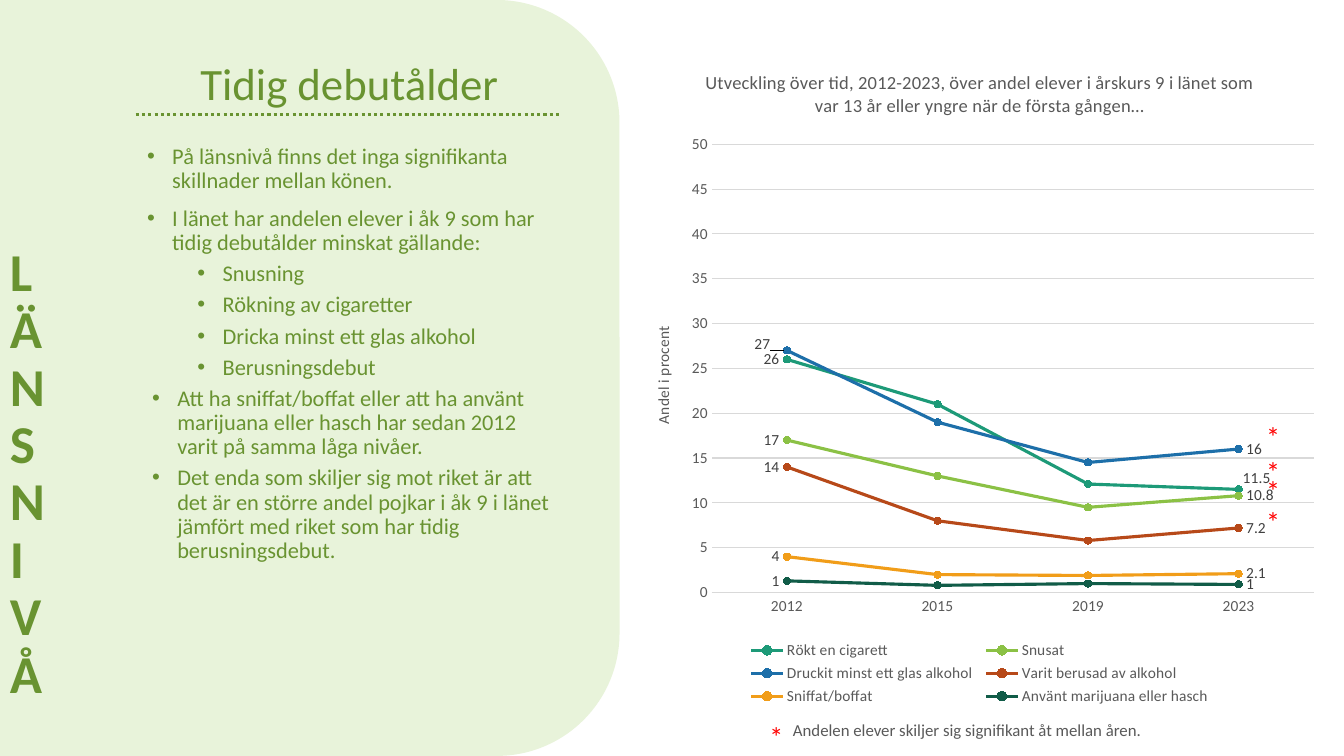
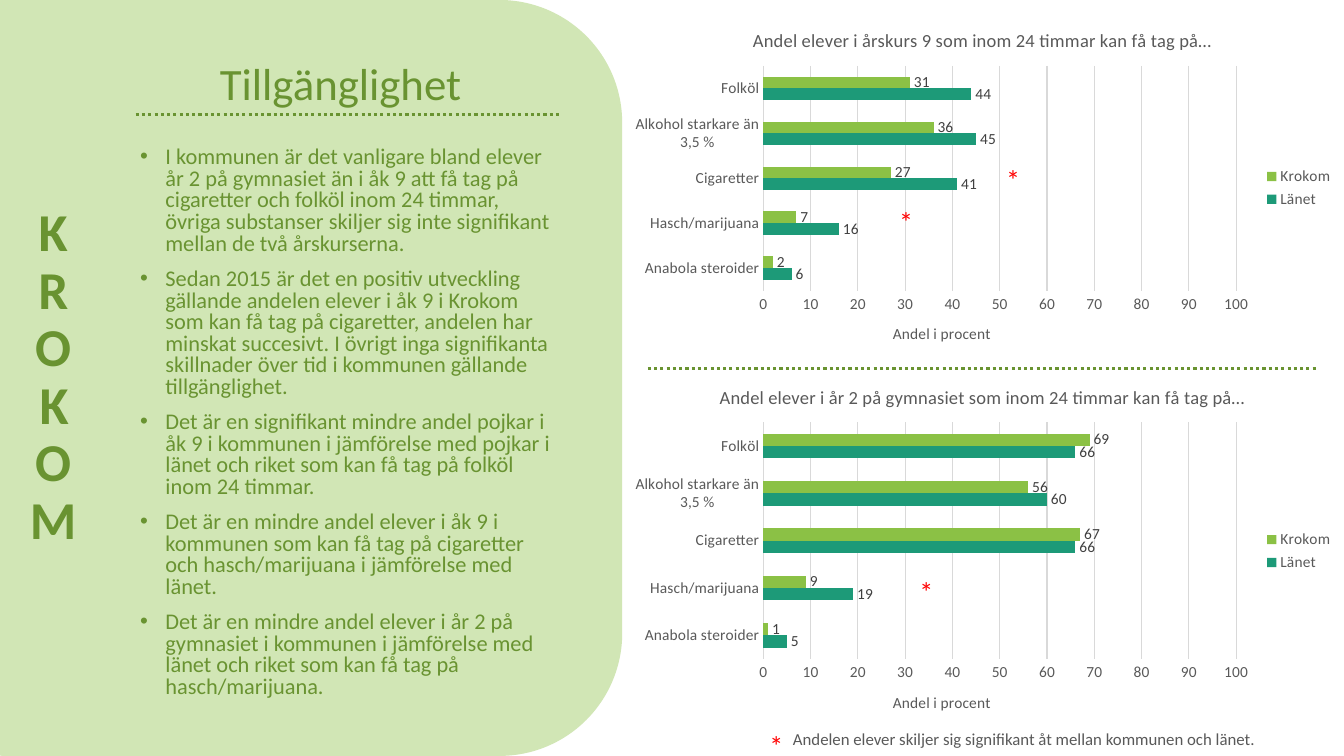
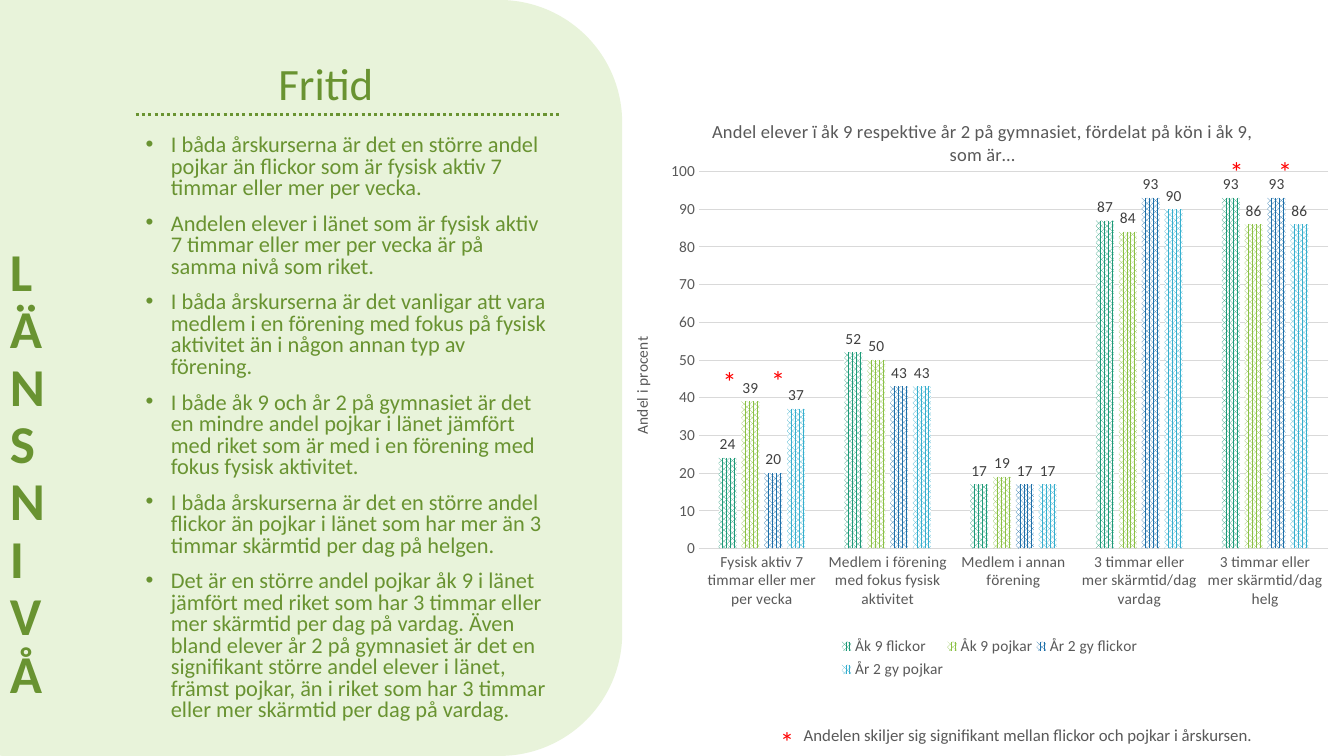
from dataclasses import dataclass
from lxml import etree
from pptx import Presentation
from pptx import util as u
from pptx.chart.data import CategoryChartData
from pptx.dml.color import RGBColor
from pptx.enum import chart as ch
from pptx.enum import dml, shapes, text
from pptx.oxml.ns import qn

FONT = "Calibri"
GREEN, RED, GREY, DARK, GRID = "699331", "FF0000", "595959", "404040", "D9D9D9"
COUNTY, KROKOM = "E8F3DA", "D1E6B5"
TEAL, LIME, BLUE, RUST, AMBER, PINE, SKY = (
    "1D9A78", "8BC145", "1D6FA9", "B74919", "F19D19", "115C48", "36AFCE")
AXIS_TITLE = "Andel i procent"


@dataclass
class Box:
    x: float
    y: float
    w: float
    h: float

    def share(self, x, y, w, h):
        return Box(self.x + self.w * x / 100, self.y + self.h * y / 100,
                   self.w * w / 100, self.h * h / 100)

    def emu(self):
        return [u.Inches(v) for v in (self.x, self.y, self.w, self.h)]


PAGE = Box(0, 0, 13.33, 7.5)


def rgb(value):
    return RGBColor.from_string(value)


def style(font, size, color=GREEN, bold=False):
    font.name, font.size, font.bold = FONT, u.Pt(size), bold
    font.color.rgb = rgb(color)


def add_text(slide, box, words, size, color=GREEN, bold=False, align=None,
             anchor=text.MSO_ANCHOR.TOP, spacing=None):
    shape = slide.shapes.add_textbox(*box.emu())
    frame = shape.text_frame
    frame.word_wrap, frame.vertical_anchor = True, anchor
    para = frame.paragraphs[0]
    para.text, para.alignment, para.line_spacing = words, align, spacing
    style(para.font, size, color, bold)
    return shape


def add_rule(slide, box):
    left, top, width, _ = box.emu()
    rule = slide.shapes.add_connector(
        shapes.MSO_CONNECTOR.STRAIGHT, left, top, left + width, top)
    rule.line.color.rgb, rule.line.width = rgb(GREEN), u.Pt(2.25)
    rule.line.dash_style = dml.MSO_LINE.ROUND_DOT
    etree.SubElement(rule.element.spPr, qn("a:effectLst"))


def add_bullets(slide, box, items, spacing):
    frame = slide.shapes.add_textbox(*box.emu()).text_frame
    frame.word_wrap = True
    for i, (level, indent, words) in enumerate(items):
        para = frame.add_paragraph() if i else frame.paragraphs[0]
        para.text, para.level, para.line_spacing = words, level, spacing
        para.space_before = u.Pt(5 if level else 10)
        style(para.font, 16)
        props = para.font._element.getparent()
        props.set("marL", str(u.Inches(indent)))
        props.set("indent", str(u.Inches(-0.25)))
        bullet_font = etree.Element(qn("a:buFont"), typeface="Arial")
        bullet = etree.Element(qn("a:buChar"), char="•")
        props.find(qn("a:spcBef")).addnext(bullet_font)
        bullet_font.addnext(bullet)


def add_panel(slide, left, color, title, title_box, side, side_box, align=None):
    panel = slide.shapes.add_shape(
        shapes.MSO_SHAPE.ROUNDED_RECTANGLE, *PAGE.share(left, 0, 54.8, 100).emu())
    panel.shadow.inherit = False
    panel.fill.solid()
    panel.fill.fore_color.rgb = rgb(color)
    panel.line.fill.background()
    label = add_text(slide, side_box, side, 38, bold=True, align=align,
                     anchor=text.MSO_ANCHOR.BOTTOM, spacing=0.9)
    label.element.txBody.bodyPr.set("vert", "wordArtVert")
    add_text(slide, title_box, title, 32, align=text.PP_ALIGN.CENTER,
             anchor=text.MSO_ANCHOR.BOTTOM, spacing=0.9)
    add_rule(slide, PAGE.share(10.1, 15.2, 31.6, 0))


def add_star(slide, box):
    add_text(slide, Box(box.x, box.y, 0.48, 0.69), "*", 20, RED)


def add_note(slide, box, words):
    add_star(slide, box)
    add_text(slide, box.share(4.4, 0, 100, 100), words, 12, GREY)


def manual_layout(x, y, w, h, inner=False):
    layout = etree.Element(qn("c:layout"))
    manual = etree.SubElement(layout, qn("c:manualLayout"))
    entries = [("layoutTarget", "inner")] if inner else []
    entries += [("xMode", "edge"), ("yMode", "edge")]
    entries += zip("xywh", (v / 100 for v in (x, y, w, h)))
    for tag, value in entries:
        etree.SubElement(manual, qn("c:" + tag), val=str(value))
    return layout


def add_chart(slide, box, kind, title, cats, series, top, step, plot,
              legend=None, stars=(), fmt="0"):
    data = CategoryChartData(number_format=fmt)
    data.categories = cats
    for name, _, values, *own in series:
        data.add_series(name, values, *own)
    chart = slide.shapes.add_chart(kind, *box.emu(), data).chart
    style(chart.font, 11, "000000")
    chart.has_title = True
    chart.chart_title.include_in_layout = False
    heading = chart.chart_title.text_frame.paragraphs[0]
    heading.text = title
    style(heading.font, 13.2, GREY)

    cat_axis, val_axis = chart.category_axis, chart.value_axis
    for axis in (cat_axis, val_axis):
        axis.major_tick_mark = axis.minor_tick_mark = ch.XL_TICK_MARK.NONE
        style(axis.tick_labels.font, 11, GREY)
    cat_axis.format.line.color.rgb = rgb(GRID)
    cat_axis.format.line.width = u.Pt(0.75)
    val_axis.format.line.fill.background()
    val_axis.minimum_scale, val_axis.maximum_scale = 0, top
    val_axis.major_unit = step
    grid = val_axis.major_gridlines.format.line
    grid.color.rgb, grid.width = rgb(GRID), u.Pt(0.75)
    caption = val_axis.axis_title.text_frame.paragraphs[0]
    caption.text = AXIS_TITLE
    style(caption.font, 11, GREY)

    area = chart._chartSpace.chart.plotArea
    for old in area.findall(qn("c:layout")):
        area.remove(old)
    area.insert(0, manual_layout(*plot, inner=True))
    chart.has_legend = True
    chart.legend.include_in_layout = False
    chart.legend.position = (ch.XL_LEGEND_POSITION.BOTTOM if legend
                             else ch.XL_LEGEND_POSITION.RIGHT)
    style(chart.legend.font, 11, GREY)
    if legend:
        key = chart.legend._element
        for old in key.findall(qn("c:layout")):
            key.remove(old)
        key.find(qn("c:legendPos")).addnext(manual_layout(*legend))
    for x, y in stars:
        add_star(slide, box.share(x, y, 0, 0))
    return chart


def style_bars(chart, series, gap, overlap=0, pattern=False):
    bars = chart.plots[0]
    bars.gap_width, bars.overlap, bars.vary_by_categories = gap, overlap, False
    for bar, (_, color, _) in zip(bars.series, series):
        fill = bar.format.fill
        if pattern:
            fill.patterned()
            fill.pattern = dml.MSO_PATTERN.PERCENT_75
            fill.back_color.rgb = rgb("FFFFFF")
        else:
            fill.solid()
        fill.fore_color.rgb = rgb(color)
        labels = bar.data_labels
        labels.show_value, labels.number_format = True, "0"
        labels.number_format_is_linked = False
        labels.position = ch.XL_LABEL_POSITION.OUTSIDE_END
        style(labels.font, 11, DARK)


def style_lines(chart, series, shifts):
    chart.plots[0].vary_by_categories = False
    ends = ((0, ch.XL_LABEL_POSITION.LEFT), (3, ch.XL_LABEL_POSITION.RIGHT))
    for line, (name, color, *_) in zip(chart.plots[0].series, series):
        line.smooth = False
        line.format.line.color.rgb, line.format.line.width = rgb(color), u.Pt(2.25)
        line.marker.style, line.marker.size = ch.XL_MARKER_STYLE.CIRCLE, 5
        line.marker.format.fill.solid()
        line.marker.format.fill.fore_color.rgb = rgb(color)
        line.marker.format.line.color.rgb = rgb(color)
        for index, position in ends:
            label = line.points[index].data_label
            style(label.font, 11, DARK)
            label.position = position
            if (name, index) in shifts:
                element = label._get_or_add_dLbl()
                layout = etree.Element(qn("c:layout"))
                manual = etree.SubElement(layout, qn("c:manualLayout"))
                for tag, offset in zip("xy", shifts[name, index]):
                    etree.SubElement(manual, qn("c:" + tag), val=str(offset / 100))
                element.find(qn("c:idx")).addnext(layout)


def debut_slide(slide):
    add_panel(slide, -8.7, COUNTY, "Tidig debutålder", PAGE.share(9.4, 2.1, 33.2, 13.1),
              "LÄNSNIVÅ", PAGE.share(0, 6.3, 7.9, 87.6))
    add_bullets(slide, PAGE.share(10.2, 18.5, 31.5, 69.3), [
        (0, 0.25, "På länsnivå finns det inga signifikanta skillnader mellan könen."),
        (0, 0.25, "I länet har andelen elever i åk 9 som har tidig debutålder minskat gällande:"),
        (1, 0.75, "Snusning"),
        (1, 0.75, "Rökning av cigaretter"),
        (1, 0.75, "Dricka minst ett glas alkohol"),
        (1, 0.75, "Berusningsdebut"),
        (1, 0.3, "Att ha sniffat/boffat eller att ha använt marijuana eller hasch har sedan 2012 varit på samma låga nivåer."),
        (1, 0.3, "Det enda som skiljer sig mot riket är att det är en större andel pojkar i åk 9 i länet jämfört med riket som har tidig berusningsdebut."),
    ], 0.9)
    series = [
        ("Rökt en cigarett", TEAL, (26, 21, 12.1, 11.5)),
        ("Snusat", LIME, (17, 13, 9.5, 10.8)),
        ("Druckit minst ett glas alkohol", BLUE, (27, 19, 14.5, 16)),
        ("Varit berusad av alkohol", RUST, (14, 8, 5.8, 7.2)),
        ("Sniffat/boffat", AMBER, (4, 2, 1.9, 2.1)),
        ("Använt marijuana eller hasch", PINE, (1.3, 0.8, 1, 0.9), "0"),
    ]
    chart = add_chart(
        slide, PAGE.share(47, 6.3, 51.8, 87.6), ch.XL_CHART_TYPE.LINE_MARKERS,
        "Utveckling över tid, 2012-2023, över andel elever i årskurs 9 i länet som var 13 år eller yngre när de första gången…",
        ["2012", "2015", "2019", "2023"], series, 50, 5,
        (11.5, 14.6, 86.5, 67.7), (16, 89, 68, 11),
        [(89.7, y) for y in (55.4, 60.7, 63.6, 68.2)], "General")
    style_lines(chart, series, {("Druckit minst ett glas alkohol", 0): (-1.3, -0.9),
                                ("Rökt en cigarett", 3): (-0.5, -1.7)})
    add_note(slide, PAGE.share(56.5, 94.5, 40, 4),
             "Andelen elever skiljer sig signifikant åt mellan åren.")


def access_slide(slide):
    add_panel(slide, -8.5, KROKOM, "Tillgänglighet", PAGE.share(11.3, 2.1, 28.1, 13.1),
              "KROKOM", PAGE.share(0, 1.6, 7.9, 96.9), text.PP_ALIGN.CENTER)
    add_bullets(slide, PAGE.share(9.7, 18.9, 32.1, 75.2), [(0, 0.25, words) for words in (
        "I kommunen är det vanligare bland elever år 2 på gymnasiet än i åk 9 att få tag på cigaretter och folköl inom 24 timmar, övriga substanser skiljer sig inte signifikant mellan de två årskurserna.",
        "Sedan 2015 är det en positiv utveckling gällande andelen elever i åk 9 i Krokom som kan få tag på cigaretter, andelen har minskat succesivt. I övrigt inga signifikanta skillnader över tid i kommunen gällande tillgänglighet.",
        "Det är en signifikant mindre andel pojkar i åk 9 i kommunen i jämförelse med pojkar i länet och riket som kan få tag på folköl inom 24 timmar.",
        "Det är en mindre andel elever i åk 9 i kommunen som kan få tag på cigaretter och hasch/marijuana i jämförelse med länet.",
        "Det är en mindre andel elever i år 2 på gymnasiet i kommunen i jämförelse med länet och riket som kan få tag på hasch/marijuana.",
    )], 0.8)
    cats = ["Anabola steroider", "Hasch/marijuana", "Cigaretter",
            "Alkohol starkare än 3,5 %", "Folköl"]
    for group, top, height, plot, county, krokom, stars in (
        ("årskurs 9", 1.6, 46.5, (19.7, 15.3, 65.4, 64), (6, 16, 41, 45, 44),
         (2, 7, 27, 36, 31), [(51.9, 41.3), (37.1, 53.3)]),
        ("år 2 på gymnasiet", 48.7, 48.4, (19.7, 14.8, 65.4, 64.7), (5, 19, 66, 60, 66),
         (1, 9, 67, 56, 69), [(39.9, 55.1)]),
    ):
        series = [("Länet", TEAL, county), ("Krokom", LIME, krokom)]
        chart = add_chart(
            slide, PAGE.share(46.2, top, 53.8, height), ch.XL_CHART_TYPE.BAR_CLUSTERED,
            f"Andel elever i {group} som inom 24 timmar kan få tag på…",
            cats, series, 100, 10, plot, stars=stars)
        style_bars(chart, series, 182)
    add_rule(slide, PAGE.share(48.2, 48.7, 49.8, 0))
    add_note(slide, PAGE.share(56.5, 95.7, 40, 4),
             "Andelen elever skiljer sig signifikant åt mellan kommunen och länet.")


def leisure_slide(slide):
    add_panel(slide, -8.5, COUNTY, "Fritid", PAGE.share(10.2, 2.1, 28.1, 13.1),
              "LÄNSNIVÅ", PAGE.share(0, 6.3, 7.9, 87.6))
    add_bullets(slide, PAGE.share(10.1, 17.3, 31.6, 82.7), [(0, 0.25, words) for words in (
        "I båda årskurserna är det en större andel pojkar än flickor som är fysisk aktiv 7 timmar eller mer per vecka.",
        "Andelen elever i länet som är fysisk aktiv 7 timmar eller mer per vecka är på samma nivå som riket.",
        "I båda årskurserna är det vanligar att vara medlem i en förening med fokus på fysisk aktivitet än i någon annan typ av förening.",
        "I både åk 9 och år 2 på gymnasiet är det en mindre andel pojkar i länet jämfört med riket som är med i en förening med fokus fysisk aktivitet.",
        "I båda årskurserna är det en större andel flickor än pojkar i länet som har mer än 3 timmar skärmtid per dag på helgen.",
        "Det är en större andel pojkar åk 9 i länet jämfört med riket som har 3 timmar eller mer skärmtid per dag på vardag. Även bland elever år 2 på gymnasiet är det en signifikant större andel elever i länet, främst pojkar, än i riket som har 3 timmar eller mer skärmtid per dag på vardag.",
    )], 0.8)
    series = [
        ("Åk 9 flickor", TEAL, (24, 52, 17, 87, 93)),
        ("Åk 9 pojkar", LIME, (39, 50, 19, 84, 86)),
        ("År 2 gy flickor", BLUE, (20, 43, 17, 93, 93)),
        ("År 2 gy pojkar", SKY, (37, 43, 17, 90, 86)),
    ]
    chart = add_chart(
        slide, PAGE.share(46.2, 12.9, 53.8, 78.4), ch.XL_CHART_TYPE.COLUMN_CLUSTERED,
        "Andel elever ï åk 9 respektive år 2 på gymnasiet, fördelat på kön i åk 9, som är…",
        ["Fysisk aktiv 7 timmar eller mer per vecka",
         "Medlem i förening med fokus fysisk aktivitet", "Medlem i annan förening",
         "3 timmar eller mer skärmtid/dag vardag", "3 timmar eller mer skärmtid/dag helg"],
        series, 100, 10, (10.8, 12.5, 87, 63.6), (30, 90.3, 42, 8.5),
        [(12.7, 44.2), (19.4, 44.1), (82.8, 8.7), (89.5, 8.7)])
    style_bars(chart, series, 219, -27, pattern=True)
    add_note(slide, PAGE.share(57.3, 95.2, 40, 4),
             "Andelen skiljer sig signifikant mellan flickor och pojkar i årskursen.")


def main():
    deck = Presentation()
    deck.slide_width, deck.slide_height = u.Inches(PAGE.w), u.Inches(PAGE.h)
    for build in (debut_slide, access_slide, leisure_slide):
        build(deck.slides.add_slide(deck.slide_layouts[6]))
    deck.save("out.pptx")


if __name__ == "__main__":
    main()
